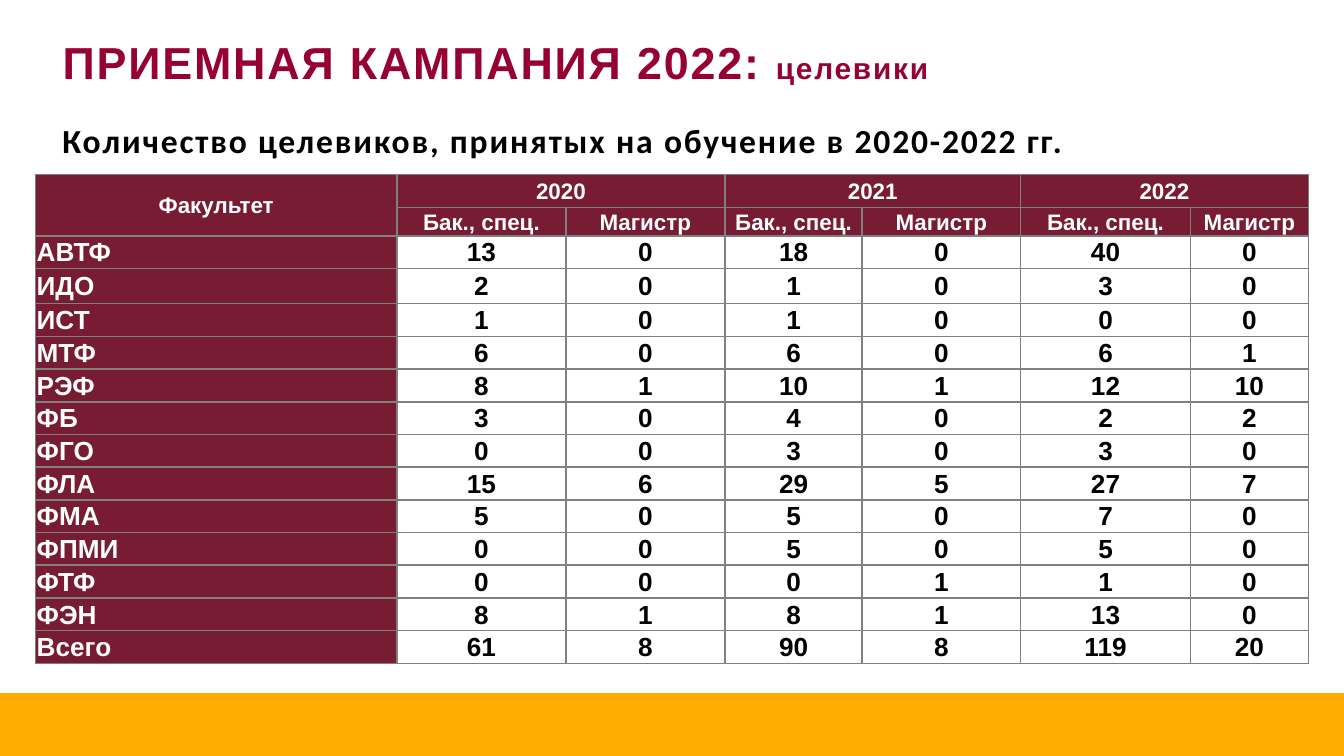
"""Build the slide on target-quota admissions by faculty, 2020-2022."""
import pptx
import pptx.dml.color
import pptx.enum.shapes
import pptx.enum.text
import pptx.oxml
import pptx.oxml.ns
import pptx.util

Pt = pptx.util.Pt
RGB = pptx.dml.color.RGBColor
ALIGN = pptx.enum.text.PP_ALIGN
MIDDLE = pptx.enum.text.MSO_ANCHOR.MIDDLE
FIT = pptx.enum.text.MSO_AUTO_SIZE

WINE = RGB(0x78, 0x1C, 0x33)
RED = RGB(0x96, 0x00, 0x32)
AMBER = RGB(0xFF, 0xAB, 0x00)
WHITE = RGB(0xFF, 0xFF, 0xFF)
BLACK = RGB(0x00, 0x00, 0x00)
GREY = RGB(0x80, 0x80, 0x80)

YEARS = ["2020", "2021", "2022"]
ROWS = [
    ("АВТФ", 13, 0, 18, 0, 40, 0),
    ("ИДО", 2, 0, 1, 0, 3, 0),
    ("ИСТ", 1, 0, 1, 0, 0, 0),
    ("МТФ", 6, 0, 6, 0, 6, 1),
    ("РЭФ", 8, 1, 10, 1, 12, 10),
    ("ФБ", 3, 0, 4, 0, 2, 2),
    ("ФГО", 0, 0, 3, 0, 3, 0),
    ("ФЛА", 15, 6, 29, 5, 27, 7),
    ("ФМА", 5, 0, 5, 0, 7, 0),
    ("ФПМИ", 0, 0, 5, 0, 5, 0),
    ("ФТФ", 0, 0, 0, 1, 1, 0),
    ("ФЭН", 8, 1, 8, 1, 13, 0),
    ("Всего", 61, 8, 90, 8, 119, 20),
]
WIDTHS = [193.7, 90.5, 85.2, 73.6, 84.8, 91.1, 63.1]
HEIGHTS = [17.7, 14.5, 16, 18.9] + [16] * 11


def style(para, face, size, color):
    para.font.name = face
    para.font.bold = True
    para.font.color.rgb = color
    if size:
        para.font.size = Pt(size)


def border(cell):
    props = cell._tc.get_or_add_tcPr()
    space = pptx.oxml.ns.nsdecls("a")
    for index, side in enumerate(["lnL", "lnR", "lnT", "lnB"]):
        line = pptx.oxml.parse_xml(
            f'<a:{side} {space} w="12700"><a:solidFill>'
            f'<a:srgbClr val="{GREY}"/></a:solidFill></a:{side}>'
        )
        props.insert(index, line)


deck = pptx.Presentation()
deck.slide_width, deck.slide_height = Pt(720), Pt(405)
slide = deck.slides.add_slide(deck.slide_layouts[5])
shapes = slide.shapes

band = shapes.add_shape(
    pptx.enum.shapes.MSO_SHAPE.RECTANGLE, 0, Pt(371.3), Pt(720), Pt(33.7)
)
band.shadow.inherit = False
band.fill.solid()
band.fill.fore_color.rgb = AMBER
band.line.fill.background()

title = shapes.title
title.left, title.top, title.width, title.height = Pt(26.4), Pt(4.5), Pt(660), Pt(57)
frame = title.text_frame
frame.auto_size = FIT.NONE
frame.vertical_anchor = MIDDLE
head = frame.paragraphs[0]
head.alignment = ALIGN.LEFT
style(head, "Arial", None, RED)
for text, size in [("ПРИЕМНАЯ КАМПАНИЯ 2022: ", 24), ("целевики", 16)]:
    run = head.add_run()
    run.text = text
    run.font.size = Pt(size)

box = shapes.add_textbox(Pt(26.4), Pt(60.8), Pt(634), Pt(29))
box.text_frame.word_wrap = True
box.text_frame.auto_size = FIT.SHAPE_TO_FIT_TEXT
note = box.text_frame.paragraphs[0]
note.text = "Количество целевиков, принятых на обучение в 2020-2022 гг."
style(note, "Calibri", 18, BLACK)

for run in [*head.runs, *note.runs]:
    run._r.get_or_add_rPr().set("spc", "100")

table = shapes.add_table(
    len(HEIGHTS), len(WIDTHS), Pt(19), Pt(93.5), Pt(sum(WIDTHS)), Pt(sum(HEIGHTS))
).table
table.first_row = False
table.horz_banding = False
for col, width in zip(table.columns, WIDTHS):
    col.width = Pt(width)
for row, height in zip(table.rows, HEIGHTS):
    row.height = Pt(height)

top = ["Факультет"]
for year in YEARS:
    top += [year, ""]
grid = [top, [""] + ["Бак., спец.", "Магистр"] * len(YEARS), *ROWS]

for r, row in enumerate(grid):
    for c, value in enumerate(row):
        cell = table.cell(r, c)
        dark = r < 2 or c == 0
        cell.margin_left = cell.margin_right = cell.margin_top = Pt(0.7)
        cell.margin_bottom = 0
        cell.vertical_anchor = MIDDLE
        cell.fill.solid()
        cell.fill.fore_color.rgb = WINE if dark else WHITE
        border(cell)
        para = cell.text_frame.paragraphs[0]
        para.text = str(value)
        para.alignment = ALIGN.LEFT if r > 1 and c == 0 else ALIGN.CENTER
        style(para, "Arial", 12 if r < 2 else 14, WHITE if dark else BLACK)

table.cell(0, 0).merge(table.cell(1, 0))
for c in range(1, len(WIDTHS), 2):
    table.cell(0, c).merge(table.cell(0, c + 1))

deck.save("out.pptx")
